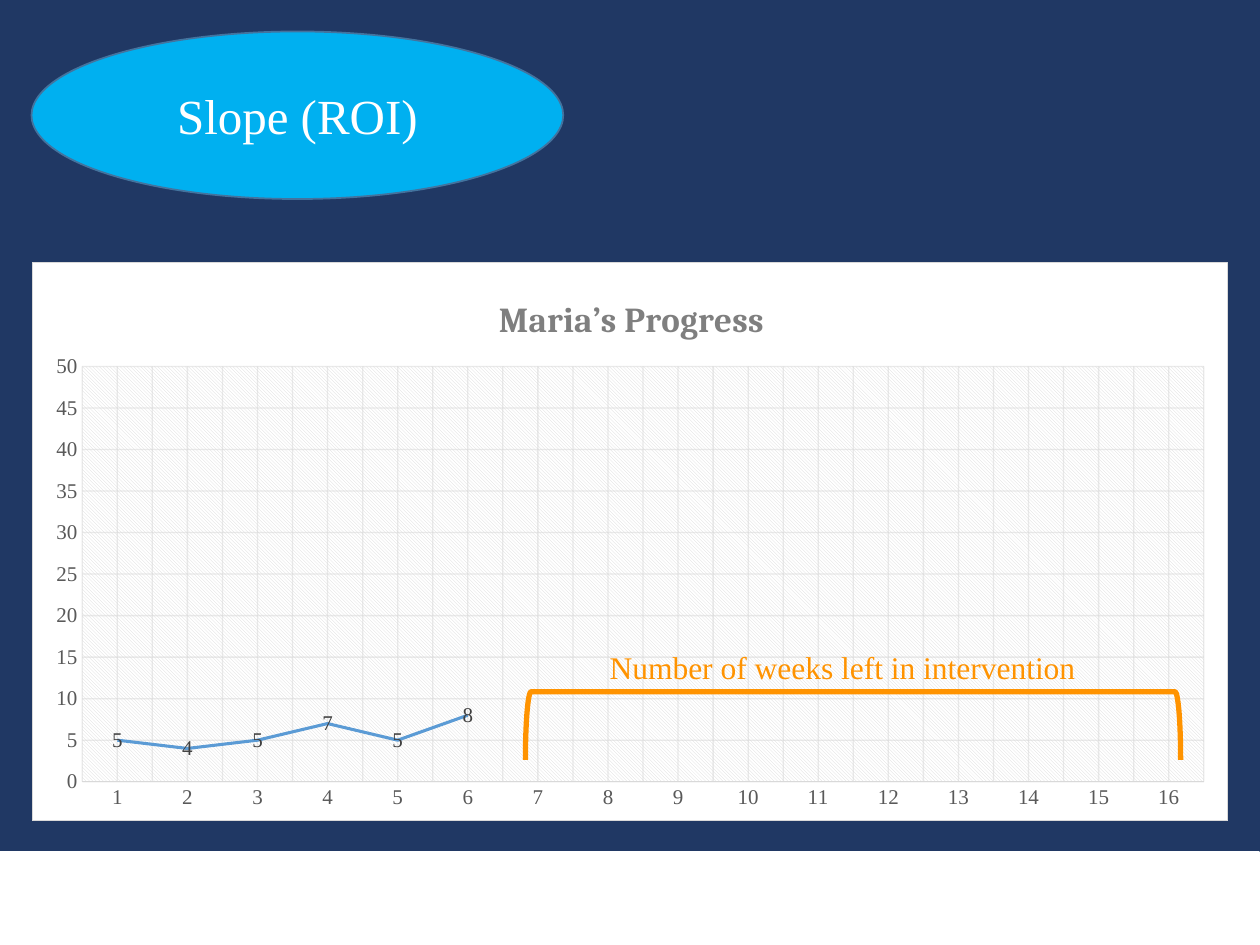
from copy import deepcopy
from dataclasses import dataclass

from lxml.etree import SubElement
from pptx import Presentation
from pptx.chart.data import CategoryChartData
from pptx.dml.color import RGBColor
from pptx.enum.chart import XL_CHART_TYPE, XL_LABEL_POSITION, XL_TICK_MARK
from pptx.enum.shapes import MSO_SHAPE
from pptx.enum.text import MSO_ANCHOR, MSO_AUTO_SIZE, PP_ALIGN
from pptx.oxml import parse_xml
from pptx.oxml.ns import nsdecls, qn
from pptx.util import Inches, Pt


@dataclass(frozen=True)
class Theme:
    font: str = "Times New Roman"
    chart_title_font: str = "Cambria"
    background: str = "203864"
    white: str = "FFFFFF"
    heading_fill: str = "00B0F0"
    heading_line: str = "43739E"
    accent: str = "FF9300"
    series: str = "5B9BD5"
    grid: str = "D9D9D9"
    axis_text: str = "595959"
    label_text: str = "404040"
    chart_title: str = "7F7F7F"
    heading_size: int = 28
    chart_title_size: int = 20
    note_size: int = 18
    axis_size: int = 12


class SlideBuilder:
    def __init__(self, slide, theme):
        self.slide = slide
        self.theme = theme
        fill = slide.background.fill
        fill.solid()
        fill.fore_color.rgb = RGBColor.from_string(theme.background)

    def style_font(self, font, size, color, name=None, bold=False):
        font.name = name or self.theme.font
        font.size = Pt(size)
        font.bold = bold
        font.color.rgb = RGBColor.from_string(color)

    def style_line(self, line, color, width):
        line.color.rgb = RGBColor.from_string(color)
        line.width = Pt(width)

    def add_shape(self, kind, left, top, width, height, line, line_width, fill=None):
        shape = self.slide.shapes.add_shape(
            kind, Inches(left), Inches(top), Inches(width), Inches(height))
        shape.shadow.inherit = False
        self.style_line(shape.line, line, line_width)
        if fill:
            shape.fill.solid()
            shape.fill.fore_color.rgb = RGBColor.from_string(fill)
        else:
            shape.fill.background()
        return shape

    def add_heading(self, text, left, top, width, height):
        theme = self.theme
        shape = self.add_shape(MSO_SHAPE.OVAL, left, top, width, height,
                               theme.heading_line, 1, theme.heading_fill)
        shape.text_frame.text = text
        shape.text_frame.vertical_anchor = MSO_ANCHOR.MIDDLE
        paragraph = shape.text_frame.paragraphs[0]
        paragraph.alignment = PP_ALIGN.CENTER
        self.style_font(paragraph.runs[0].font, theme.heading_size, theme.white)

    def add_note(self, text, left, top, width, height):
        box = self.slide.shapes.add_textbox(
            Inches(left), Inches(top), Inches(width), Inches(height))
        frame = box.text_frame
        frame.word_wrap = True
        frame.auto_size = MSO_AUTO_SIZE.SHAPE_TO_FIT_TEXT
        frame.text = text
        self.style_font(frame.paragraphs[0].runs[0].font,
                        self.theme.note_size, self.theme.accent)

    def add_line_chart(self, title, categories, values, left, top, width, height):
        theme = self.theme
        data = CategoryChartData()
        data.categories = categories
        data.add_series("Series 1", values)
        chart = self.slide.shapes.add_chart(
            XL_CHART_TYPE.LINE, Inches(left), Inches(top),
            Inches(width), Inches(height), data).chart
        self.style_font(chart.font, theme.axis_size, theme.axis_text)
        chart.has_legend = False
        chart.has_title = True
        title_frame = chart.chart_title.text_frame
        title_frame.text = title
        self.style_font(title_frame.paragraphs[0].runs[0].font, theme.chart_title_size,
                        theme.chart_title, theme.chart_title_font, bold=True)

        for axis in (chart.category_axis, chart.value_axis):
            axis.major_tick_mark = axis.minor_tick_mark = XL_TICK_MARK.NONE
            self.style_font(axis.tick_labels.font, theme.axis_size, theme.axis_text)
            self.style_gridlines(axis)
        self.add_minor_gridlines(chart.category_axis)
        self.style_line(chart.category_axis.format.line, theme.grid, 0.75)
        chart.value_axis.minimum_scale = 0
        chart.value_axis.maximum_scale = 50
        chart.value_axis.major_unit = 5
        chart.value_axis.format.line.fill.background()

        plot = chart.plots[0]
        plot.vary_by_categories = False
        series = plot.series[0]
        series.smooth = False
        self.style_line(series.format.line, theme.series, 1.75)
        labels = series.data_labels
        labels.show_value = True
        labels.position = XL_LABEL_POSITION.CENTER
        self.style_font(labels.font, theme.axis_size, theme.label_text)
        self.fill_chart_areas(chart)
        self.place_chart_parts(chart)

    def style_gridlines(self, axis):
        """Thin, partly transparent major gridlines."""
        axis.has_major_gridlines = True
        self.style_line(axis.major_gridlines.format.line, self.theme.grid, 0.75)
        gridlines = axis._element.find(qn("c:majorGridlines"))
        color = next(gridlines.iter(qn("a:srgbClr")))
        SubElement(color, qn("a:alpha")).set("val", "54000")

    def add_minor_gridlines(self, axis):
        """Minor gridlines that share the look of the major ones."""
        axis.has_minor_gridlines = True
        major = axis._element.find(qn("c:majorGridlines"))
        minor = axis._element.find(qn("c:minorGridlines"))
        minor.append(deepcopy(major.find(qn("c:spPr"))))

    def fill_chart_areas(self, chart):
        """White bordered chart area and a hatched plot area."""
        theme = self.theme

        def solid(color):
            return f'<a:solidFill><a:srgbClr val="{color}"/></a:solidFill>'

        def properties(content):
            return parse_xml(f'<c:spPr {nsdecls("c", "a")}>{content}</c:spPr>')

        chart_element = chart._chartSpace.find(qn("c:chart"))
        chart_element.addnext(properties(
            f'{solid(theme.white)}<a:ln w="9525">{solid(theme.grid)}</a:ln>'))
        chart_element.find(qn("c:plotArea")).append(properties(
            f'<a:pattFill prst="ltDnDiag"><a:fgClr><a:srgbClr val="{theme.grid}"/></a:fgClr>'
            f'<a:bgClr><a:srgbClr val="{theme.white}"/></a:bgClr></a:pattFill>'))

    def place_chart_parts(self, chart):
        """Fix title and inner plot positions as fractions of the chart."""
        def layout(target, **fractions):
            modes = "".join(f'<c:{axis}Mode val="edge"/>' for axis in "xy")
            sizes = "".join(f'<c:{key} val="{value}"/>' for key, value in fractions.items())
            return parse_xml(f'<c:layout {nsdecls("c")}><c:manualLayout>'
                             f'{target}{modes}{sizes}</c:manualLayout></c:layout>')

        chart_element = chart._chartSpace.find(qn("c:chart"))
        title = chart_element.find(qn("c:title"))
        plot_area = chart_element.find(qn("c:plotArea"))
        for parent in (title, plot_area):
            for old_layout in parent.findall(qn("c:layout")):
                parent.remove(old_layout)
        title.find(qn("c:tx")).addnext(layout("", x=0.385, y=0.05))
        plot_area.insert(0, layout('<c:layoutTarget val="inner"/>',
                                   x=0.042, y=0.186, w=0.938, h=0.744))


def main():
    presentation = Presentation()
    presentation.slide_width = Inches(10)
    presentation.slide_height = Inches(7.5)
    theme = Theme()
    builder = SlideBuilder(
        presentation.slides.add_slide(presentation.slide_layouts[6]), theme)

    builder.add_shape(MSO_SHAPE.RECTANGLE, 0, 6.76, 9.99, 0.74,
                      theme.white, 1, theme.white)
    weeks = [str(week) for week in range(1, 17)]
    scores = [5, 4, 5, 7, 5, 8]
    scores += [None] * (len(weeks) - len(scores))
    builder.add_line_chart("Maria’s Progress", weeks, scores, 0.25, 2.08, 9.5, 4.44)
    bracket = builder.add_shape(MSO_SHAPE.LEFT_BRACKET, 6.5, 3.16, 0.54, 5.2,
                                theme.accent, 3)
    bracket.rotation = 90
    builder.add_note("Number of weeks left in intervention", 4.74, 5.09, 4.54, 0.4)
    builder.add_heading("Slope (ROI)", 0.25, 0.25, 4.22, 1.33)
    presentation.save("out.pptx")


if __name__ == "__main__":
    main()
